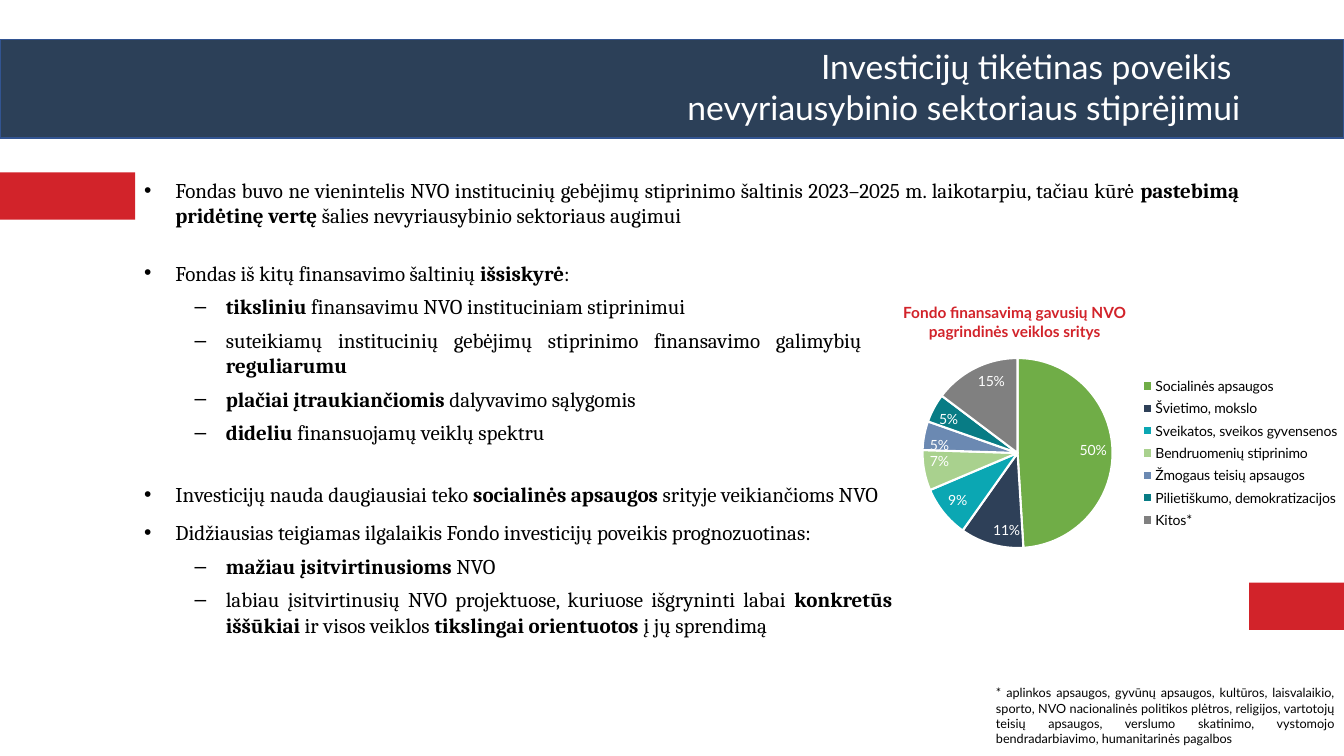
from typing import Any, NamedTuple

from lxml.etree import SubElement
from pptx import Presentation
from pptx.chart.data import CategoryChartData
from pptx.dml.color import RGBColor
from pptx.enum.chart import XL_CHART_TYPE as ChartType
from pptx.enum.chart import XL_LABEL_POSITION as LabelPosition
from pptx.enum.chart import XL_LEGEND_POSITION as LegendPosition
from pptx.enum.shapes import MSO_SHAPE as Preset
from pptx.enum.text import MSO_ANCHOR as Anchor
from pptx.enum.text import MSO_AUTO_SIZE as AutoSize
from pptx.enum.text import PP_ALIGN as Align
from pptx.oxml.ns import qn
from pptx.util import Inches, Pt

NAVY = RGBColor(0x2C, 0x40, 0x58)
BAND_EDGE = RGBColor(0x32, 0x54, 0x91)
RED = RGBColor(0xD2, 0x23, 0x2A)
BLACK = RGBColor(0, 0, 0)
WHITE = RGBColor(0xFF, 0xFF, 0xFF)

COMPARISON_LAYOUT = 4


class Area(NamedTuple):
    left: float
    top: float
    width: float
    height: float


class Item(NamedTuple):
    """A list item; parts between bars are bold."""
    text: str
    level: int = 0
    space: float = 3


class BulletList(NamedTuple):
    area: Area
    items: list[Item]


class Label(NamedTuple):
    area: Area
    text: str
    align: Align
    font: dict[str, Any]
    color: RGBColor


class Slice(NamedTuple):
    name: str
    percent: int
    color: RGBColor


TITLE_AREA = Area(2.92, 0.45, 9.48, 0.87)
TITLE_LINES = ["Investicijų tikėtinas poveikis ", "nevyriausybinio sektoriaus stiprėjimui"]
BAND_AREA = Area(0, 0.39, 13.33, 0.98)
RED_TABS = [Area(0, 1.71, 1.34, 0.47), Area(12.39, 5.78, 0.94, 0.47)]
CHART_AREA = Area(7.56, 3.19, 5.89, 2.51)
# Shares of the chart's width and height
PIE_PART = Area(0.27, 0.14, 0.32, 0.76)
LEGEND_PART = Area(0.62, 0.2, 0.37, 0.64)

LISTS = [
    BulletList(Area(1.33, 1.71, 11.06, 0.61), [
        Item("Fondas buvo ne vienintelis NVO institucinių gebėjimų stiprinimo šaltinis "
             "2023–2025 m. laikotarpiu, tačiau kūrė |pastebimą pridėtinę vertę |"
             "šalies nevyriausybinio sektoriaus augimui", space=6),
    ]),
    BulletList(Area(1.33, 2.53, 7.32, 1.95), [
        Item("Fondas iš kitų finansavimo šaltinių |išsiskyrė|:"),
        Item("|tiksliniu| finansavimu NVO instituciniam stiprinimui", 1),
        Item("suteikiamų institucinių gebėjimų stiprinimo finansavimo galimybių |reguliarumu", 1),
        Item("|plačiai įtraukiančiomis |dalyvavimo sąlygomis", 1),
        Item("|dideliu| finansuojamų veiklų spektru", 1),
    ]),
    BulletList(Area(1.33, 4.73, 7.62, 1.91), [
        Item("Investicijų nauda daugiausiai teko |socialinės apsaugos| srityje veikiančioms NVO",
             space=6),
        Item("Didžiausias teigiamas ilgalaikis Fondo investicijų poveikis prognozuotinas:"),
        Item("|mažiau įsitvirtinusioms |NVO", 1),
        Item("labiau įsitvirtinusių NVO projektuose, kuriuose išgryninti labai "
             "|konkretūs iššūkiai |ir visos veiklos |tikslingai orientuotos |į jų sprendimą", 1),
    ]),
]

LABELS = [
    Label(Area(9.78, 6.75, 3.55, 0.71),
          "* aplinkos apsaugos, gyvūnų apsaugos, kultūros, laisvalaikio, sporto, NVO "
          "nacionalinės politikos plėtros, religijos, vartotojų teisių apsaugos, verslumo "
          "skatinimo, vystomojo bendradarbiavimo, humanitarinės pagalbos",
          Align.JUSTIFY, {"name": "Lato", "size": Pt(9)}, BLACK),
    Label(Area(8.82, 2.96, 2.49, 0.47),
          "Fondo finansavimą gavusių NVO pagrindinės veiklos sritys",
          Align.CENTER, {"name": "Lato", "size": Pt(11), "bold": True}, RED),
]

SLICES = [
    Slice("Socialinės apsaugos", 50, RGBColor(0x70, 0xAD, 0x47)),
    Slice("Švietimo, mokslo", 11, RGBColor(0x2E, 0x40, 0x58)),
    Slice("Sveikatos, sveikos gyvensenos", 9, RGBColor(0x0B, 0xA7, 0xB3)),
    Slice("Bendruomenių stiprinimo", 7, RGBColor(0xA9, 0xD1, 0x8E)),
    Slice("Žmogaus teisių apsaugos", 5, RGBColor(0x6B, 0x89, 0xB2)),
    Slice("Pilietiškumo, demokratizacijos", 5, RGBColor(0x08, 0x7C, 0x85)),
    Slice("Kitos*", 15, RGBColor(0x80, 0x80, 0x80)),
]


def apply(target: Any, formats: dict[str, Any]) -> None:
    for name, value in formats.items():
        setattr(target, name, value)


def style_font(font: Any, formats: dict[str, Any], color: RGBColor) -> None:
    apply(font, formats)
    font.color.rgb = color


def inches(area: Area) -> list[Inches]:
    return [Inches(length) for length in area]


def place(box: Any, area: Area, anchor: Anchor = Anchor.TOP) -> Any:
    """Move a text box or placeholder and return its prepared text frame."""
    apply(box, dict(zip(Area._fields, inches(area))))
    apply(box.text_frame, {"word_wrap": True, "auto_size": AutoSize.NONE,
                           "vertical_anchor": anchor})
    return box.text_frame


def fill_shape(shape: Any, color: RGBColor) -> None:
    shape.fill.solid()
    shape.fill.fore_color.rgb = color


def add_block(page: Any, area: Area, color: RGBColor) -> Any:
    block = page.shapes.add_shape(Preset.RECTANGLE, *inches(area))
    block.shadow.inherit = False
    fill_shape(block, color)
    block.line.fill.background()
    return block


def add_band(page: Any) -> None:
    """Add the title band behind the placeholders."""
    band = add_block(page, BAND_AREA, NAVY)
    band.line.color.rgb = BAND_EDGE
    band.line.width = Pt(1)
    page.shapes.title.element.addprevious(band.element)


def write_title(page: Any) -> None:
    title = page.shapes.title
    frame = place(title, TITLE_AREA, Anchor.MIDDLE)
    fill_shape(title, NAVY)
    frame.text = "\n".join(TITLE_LINES)
    for para in frame.paragraphs:
        apply(para, {"alignment": Align.RIGHT, "line_spacing": 0.9, "space_after": Pt(3)})
        style_font(para.font, {"name": "Lato", "size": Pt(24)}, WHITE)


def write_list(box: Any, content: BulletList) -> None:
    frame = place(box, content.area)
    for index, item in enumerate(content.items):
        para = frame.add_paragraph() if index else frame.paragraphs[0]
        apply(para, {"level": item.level, "alignment": Align.JUSTIFY, "line_spacing": 1.0,
                     "space_before": Pt(item.space if index else 0),
                     "space_after": Pt(item.space)})
        props = para._p.get_or_add_pPr()
        props.set("marL", str(Inches(0.31 + 0.5 * item.level)))
        props.set("indent", str(-Inches(0.31)))
        SubElement(props, qn("a:buChar"), char="•–"[item.level])
        for part, text in enumerate(item.text.split("|")):
            if text:
                span = para.add_run()
                span.text = text
                style_font(span.font, {"name": "Cambria", "size": Pt(15),
                                       "bold": part % 2 == 1}, BLACK)


def add_label(page: Any, label: Label) -> None:
    frame = place(page.shapes.add_textbox(*inches(label.area)), label.area)
    para = frame.paragraphs[0]
    para.text = label.text
    para.alignment = label.align
    style_font(para.font, label.font, label.color)


def set_layout(holder: Any, part: Area, position: int, **target: str) -> None:
    """Fix a chart part's place, with its layout as the holder's child at position."""
    for old in holder.findall(qn("c:layout")):
        holder.remove(old)
    layout = holder.makeelement(qn("c:layout"))
    holder.insert(position, layout)
    manual = SubElement(layout, qn("c:manualLayout"))
    settings = {**target, "xMode": "edge", "yMode": "edge", **dict(zip("xywh", part))}
    for name, value in settings.items():
        SubElement(manual, qn(f"c:{name}"), val=str(value))


def add_pie(page: Any) -> None:
    data = CategoryChartData()
    data.categories = [piece.name for piece in SLICES]
    data.add_series("Series 1", [piece.percent for piece in SLICES])
    chart = page.shapes.add_chart(ChartType.PIE, *inches(CHART_AREA), data).chart
    apply(chart, {"has_title": False, "has_legend": True})
    style_font(chart.font, {"name": "Calibri", "size": Pt(10)}, BLACK)
    legend = chart.legend
    apply(legend, {"position": LegendPosition.RIGHT, "include_in_layout": False})
    style_font(legend.font, {"name": "Lato", "size": Pt(10)}, BLACK)

    plot = chart.plots[0]
    apply(plot, {"vary_by_categories": True, "has_data_labels": True})
    apply(plot.data_labels, {"show_value": True, "show_percentage": False,
                             "number_format": '0"%"', "number_format_is_linked": False,
                             "position": LabelPosition.INSIDE_END})
    style_font(plot.data_labels.font, {"name": "Lato", "size": Pt(10)}, WHITE)
    for index, piece in enumerate(SLICES):
        look = plot.series[0].points[index].format
        fill_shape(look, piece.color)
        look.line.color.rgb = WHITE
        look.line.width = Pt(1.5)

    set_layout(chart._chartSpace.chart.plotArea, PIE_PART, 0, layoutTarget="inner")
    set_layout(legend._element, LEGEND_PART, 1)


def main() -> None:
    deck = Presentation()
    deck.slide_width, deck.slide_height = Inches(13.33), Inches(7.5)
    page = deck.slides.add_slide(deck.slide_layouts[COMPARISON_LAYOUT])
    add_band(page)
    write_title(page)
    for area in RED_TABS:
        add_block(page, area, RED)
    _, *bodies, spare = page.placeholders
    for body, content in zip(bodies, LISTS):
        write_list(body, content)
    spare.element.getparent().remove(spare.element)
    add_pie(page)
    for label in LABELS:
        add_label(page, label)
    deck.save("out.pptx")


if __name__ == "__main__":
    main()
